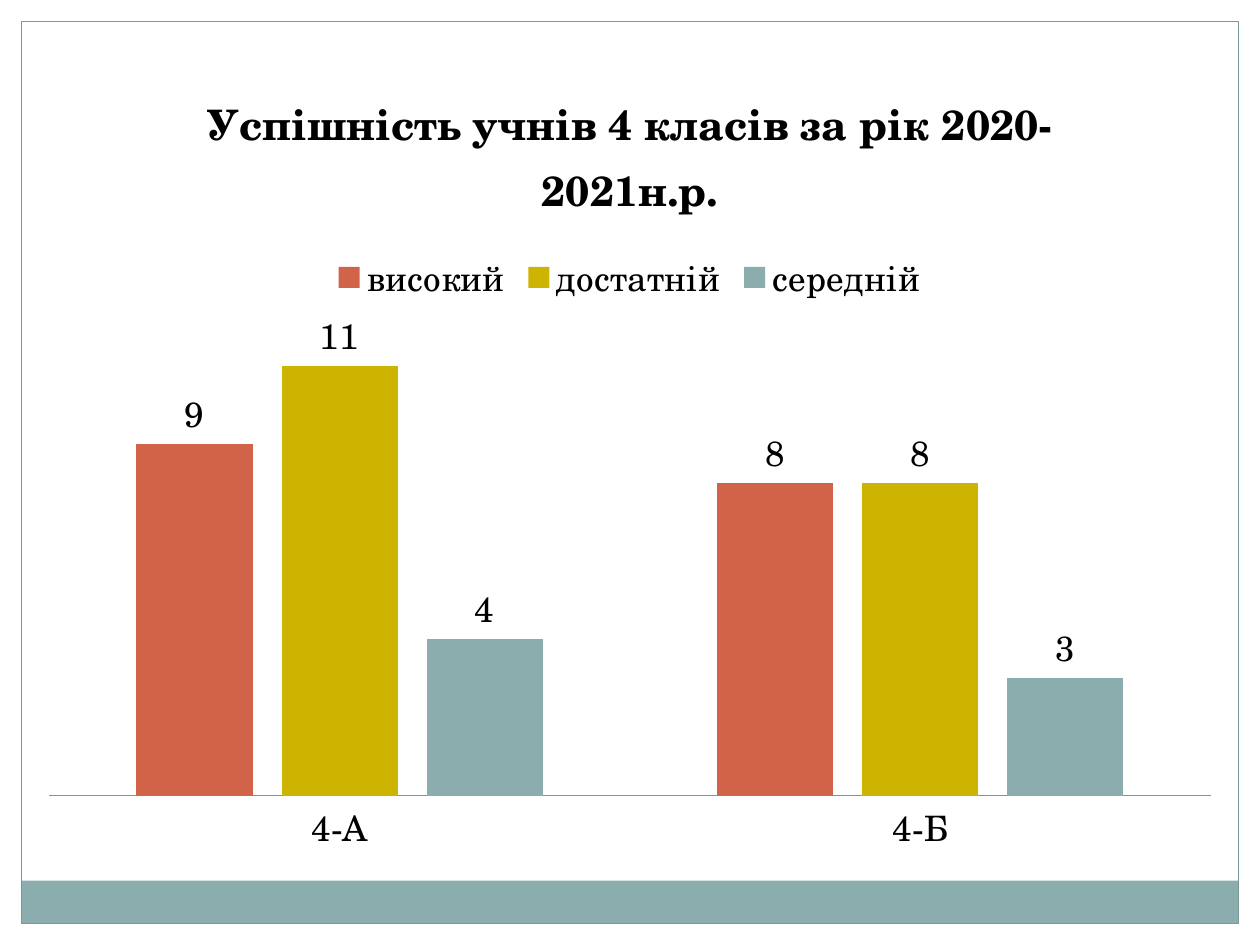
from typing import NamedTuple

from pptx import Presentation
from pptx.chart.chart import Chart
from pptx.chart.data import CategoryChartData
from pptx.dml.color import RGBColor
from pptx.enum.chart import (XL_CHART_TYPE, XL_LABEL_POSITION,
                             XL_LEGEND_POSITION, XL_TICK_MARK)
from pptx.enum.shapes import MSO_SHAPE
from pptx.slide import Slide
from pptx.text.text import Font, TextFrame
from pptx.util import Inches, Pt

FONT = "TeX Gyre Schola"
BLACK = RGBColor(0x00, 0x00, 0x00)
WHITE = RGBColor(0xFF, 0xFF, 0xFF)
RED = RGBColor(0xD1, 0x63, 0x49)
YELLOW = RGBColor(0xCC, 0xB4, 0x00)
TEAL = RGBColor(0x8C, 0xAD, 0xAE)
FRAME = RGBColor(0x7C, 0x99, 0x9A)
SLIDE_WIDTH, SLIDE_HEIGHT = 10, 7.5
MARGIN = 0.17
INNER_WIDTH = SLIDE_WIDTH - 2 * MARGIN
INNER_HEIGHT = SLIDE_HEIGHT - 2 * MARGIN
BAND_HEIGHT = 0.34
TITLE = "Успішність учнів 4 класів за рік 2020-2021н.р."
CLASSES = ("4-А", "4-Б")


class Level(NamedTuple):
    name: str
    pupils: tuple[int, ...]
    color: RGBColor


class Panel(NamedTuple):
    left: float
    top: float
    width: float
    height: float
    fill: RGBColor | None = None
    line: RGBColor | None = None


LEVELS = (
    Level("високий", (9, 8), RED),
    Level("достатній", (11, 8), YELLOW),
    Level("середній", (4, 3), TEAL),
)
PANELS = (
    Panel(0, 0, SLIDE_WIDTH, MARGIN, fill=WHITE),
    Panel(SLIDE_WIDTH - MARGIN, 0, MARGIN, SLIDE_HEIGHT, fill=WHITE),
    Panel(0, 0, MARGIN, SLIDE_HEIGHT, fill=WHITE),
    Panel(MARGIN, SLIDE_HEIGHT - MARGIN - BAND_HEIGHT, INNER_WIDTH,
          BAND_HEIGHT, fill=TEAL),
    Panel(MARGIN, MARGIN, INNER_WIDTH, INNER_HEIGHT, line=FRAME),
)


def style_font(font: Font, size: float, bold: bool = False) -> None:
    font.name = FONT
    font.size = Pt(size)
    font.bold = bold
    font.color.rgb = BLACK


def write_text(frame: TextFrame, text: str, *, size: float,
               bold: bool = False) -> None:
    run = frame.paragraphs[0].add_run()
    run.text = text
    style_font(run.font, size, bold)


def draw_panel(slide: Slide, panel: Panel) -> None:
    rectangle = slide.shapes.add_shape(
        MSO_SHAPE.RECTANGLE, Inches(panel.left), Inches(panel.top),
        Inches(panel.width), Inches(panel.height))
    rectangle.shadow.inherit = False
    if panel.fill is None:
        rectangle.fill.background()
    else:
        rectangle.fill.solid()
        rectangle.fill.fore_color.rgb = panel.fill
    if panel.line is None:
        rectangle.line.fill.background()
    else:
        rectangle.line.color.rgb = panel.line
        rectangle.line.width = Pt(0.75)


def add_results_chart(slide: Slide) -> Chart:
    results = CategoryChartData(number_format="General")
    results.categories = CLASSES
    for level in LEVELS:
        results.add_series(level.name, level.pupils)
    return slide.shapes.add_chart(
        XL_CHART_TYPE.COLUMN_CLUSTERED, Inches(0.2), Inches(0.44),
        Inches(9.6), Inches(6.46), results).chart


def style_chart(chart: Chart) -> None:
    style_font(chart.font, 10)
    chart.has_title = True
    write_text(chart.chart_title.text_frame, TITLE, size=24, bold=True)
    chart.chart_title.include_in_layout = False

    chart.has_legend = True
    chart.legend.position = XL_LEGEND_POSITION.TOP
    chart.legend.include_in_layout = False
    style_font(chart.legend.font, 20)

    class_axis = chart.category_axis
    class_axis.major_tick_mark = XL_TICK_MARK.NONE
    class_axis.format.line.color.rgb = FRAME
    style_font(class_axis.tick_labels.font, 20)

    pupil_axis = chart.value_axis
    pupil_axis.minimum_scale = 0
    pupil_axis.maximum_scale = 12
    pupil_axis.has_major_gridlines = False
    pupil_axis.visible = False


def style_columns(chart: Chart) -> None:
    plot = chart.plots[0]
    plot.gap_width = 150
    plot.overlap = -25
    plot.vary_by_categories = False
    for series, level in zip(plot.series, LEVELS):
        series.format.fill.solid()
        series.format.fill.fore_color.rgb = level.color
        labels = series.data_labels
        labels.show_value = True
        labels.position = XL_LABEL_POSITION.OUTSIDE_END
        style_font(labels.font, 20)


def main() -> None:
    presentation = Presentation()
    presentation.slide_width = Inches(SLIDE_WIDTH)
    presentation.slide_height = Inches(SLIDE_HEIGHT)
    slide = presentation.slides.add_slide(presentation.slide_layouts[6])
    for panel in PANELS:
        draw_panel(slide, panel)
    chart = add_results_chart(slide)
    style_chart(chart)
    style_columns(chart)
    presentation.save("out.pptx")


if __name__ == "__main__":
    main()
